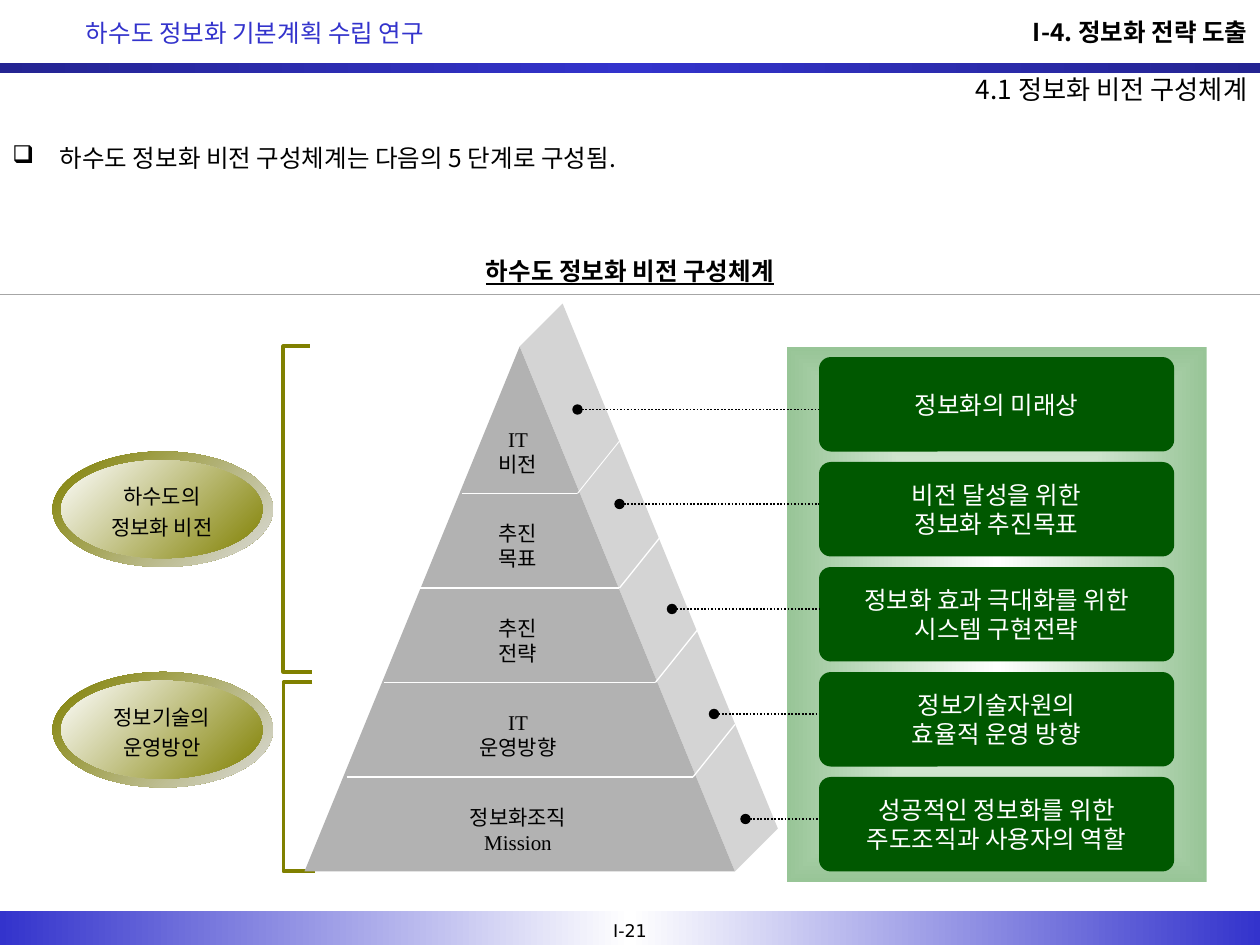
from lxml.etree import SubElement
from pptx import Presentation
from pptx.dml.color import RGBColor
from pptx.enum.dml import MSO_LINE
from pptx.enum.shapes import MSO_CONNECTOR, MSO_SHAPE
from pptx.enum.text import MSO_ANCHOR as ANCHOR, PP_ALIGN as ALIGN
from pptx.oxml import parse_xml
from pptx.oxml.ns import nsdecls, qn
from pptx.util import Pt

WHITE = RGBColor(0xFF, 0xFF, 0xFF)
BLACK = RGBColor(0x00, 0x00, 0x00)
BLUE = RGBColor(0x33, 0x33, 0xCC)
NAVY = RGBColor(0x24, 0x24, 0x92)
GREEN = RGBColor(0x00, 0x58, 0x00)
PALE_GREEN = RGBColor(0x98, 0xC5, 0x97)
OLIVE = RGBColor(0x80, 0x80, 0x00)
SILVER = RGBColor(0xDD, 0xDD, 0xDD)
FRONT_GRAY = RGBColor(0xB2, 0xB2, 0xB2)
SIDE_GRAY = RGBColor(0xD4, 0xD4, 0xD4)
RULE_GRAY = RGBColor(0xA6, 0xA6, 0xA6)
SANS = "Noto Sans CJK KR"
SERIF = "Times New Roman"


def write(shape, text, size=14, color=BLACK, font=SANS, bold=False, underline=False,
          align=ALIGN.CENTER, anchor=ANCHOR.MIDDLE, wrap=True, inset=7.2,
          spacing=None, bullet=None):
    frame = shape.text_frame
    frame.word_wrap = wrap
    frame.vertical_anchor = anchor
    frame.margin_left = frame.margin_right = Pt(inset)
    frame.margin_top = frame.margin_bottom = Pt(3.6)
    frame.text = text
    for paragraph in frame.paragraphs:
        if bullet:
            props = paragraph._p.get_or_add_pPr()
            props.set("marL", str(Pt(27)))
            props.set("indent", str(-Pt(27)))
            SubElement(props, qn("a:buChar")).set("char", bullet)
        paragraph.alignment = align
        paragraph.space_before = Pt(0)
        if spacing:
            paragraph.line_spacing = spacing
        for run in paragraph.runs:
            run.font.size = Pt(size)
            run.font.bold = bold
            run.font.underline = underline
            run.font.color.rgb = color
            run.font.name = font
            SubElement(run._r.get_or_add_rPr(), qn("a:ea")).set("typeface", SANS)


def fill_gradient(shape, colors, angle=None):
    """Spread the colors evenly; without an angle, spread them from the centre."""
    shape.shadow.inherit = False
    shape.line.fill.background()
    shape.fill.background()
    stops = "".join(
        f'<a:gs pos="{100000 * i // (len(colors) - 1)}"><a:srgbClr val="{color}"/></a:gs>'
        for i, color in enumerate(colors))
    if angle is None:
        course = ('<a:path path="shape"><a:fillToRect l="50000" t="50000" '
                  'r="50000" b="50000"/></a:path>')
    else:
        course = f'<a:lin ang="{angle * 60000}" scaled="1"/>'
    gradient = parse_xml(f'<a:gradFill {nsdecls("a")} rotWithShape="1">'
                         f'<a:gsLst>{stops}</a:gsLst>{course}</a:gradFill>')
    properties = shape._element.spPr
    properties.replace(properties.find(qn("a:noFill")), gradient)


prs = Presentation()
prs.slide_width, prs.slide_height = Pt(720), Pt(540)
slide = prs.slides.add_slide(prs.slide_layouts[5])
shapes = slide.shapes

# Title
title = shapes.title
title.left, title.top, title.width, title.height = Pt(126), Pt(36), Pt(594), Pt(30)
write(title, "4.1 정보화 비전 구성체계", size=15, align=ALIGN.RIGHT)

# Header and footer bands
for top, height, colors in ((36, 6, (NAVY, BLUE, NAVY)),
                            (520.5, 19.5, (BLUE, WHITE, BLUE))):
    band = shapes.add_shape(MSO_SHAPE.RECTANGLE, 0, Pt(top), Pt(720), Pt(height))
    fill_gradient(band, colors, angle=0)

# Free-standing texts
for left, top, width, height, text, style in (
    (340, 522, 40, 19.5, "I-21", dict(size=10, font="DejaVu Sans", wrap=False)),
    (42, 5, 360, 26, "하수도 정보화 기본계획 수립 연구",
     dict(color=BLUE, align=ALIGN.LEFT, spacing=1.1)),
    (563, 6, 157, 24, "I-4. 정보화 전략 도출",
     dict(bold=True, align=ALIGN.RIGHT, anchor=ANCHOR.TOP, wrap=False)),
    (0, 78, 720, 46, "하수도 정보화 비전 구성체계는 다음의 5 단계로 구성됨.",
     dict(align=ALIGN.LEFT, anchor=ANCHOR.TOP, bullet="❑")),
    (154, 142.5, 412, 24, "하수도 정보화 비전 구성체계",
     dict(font=SERIF, bold=True, underline=True, anchor=ANCHOR.TOP)),
):
    box = shapes.add_textbox(Pt(left), Pt(top), Pt(width), Pt(height))
    write(box, text, **style)

# Green panel with one box per level
panel = shapes.add_shape(MSO_SHAPE.RECTANGLE, Pt(449.5), Pt(198), Pt(240), Pt(306))
fill_gradient(panel, (WHITE, PALE_GREEN))
for i, meaning in enumerate((
    "정보화의 미래상",
    "비전 달성을 위한\n정보화 추진목표",
    "정보화 효과 극대화를 위한\n시스템 구현전략",
    "정보기술자원의\n효율적 운영 방향",
    "성공적인 정보화를 위한 주도조직과 사용자의 역할",
)):
    level_box = shapes.add_shape(MSO_SHAPE.ROUNDED_RECTANGLE,
                                 Pt(468), Pt(204 + 60 * i), Pt(203), Pt(54))
    level_box.adjustments[0] = 0.125
    level_box.shadow.inherit = False
    level_box.fill.solid()
    level_box.fill.fore_color.rgb = GREEN
    level_box.line.fill.background()
    write(level_box, meaning, color=WHITE)

# Olive ovals: rim and face
for top, text, font, inset in ((258, "하수도의\n정보화 비전", SANS, 1.5),
                               (384, "정보기술의 운영방안", SERIF, 7.2)):
    oval = shapes.add_group_shape()
    rim = oval.shapes.add_shape(MSO_SHAPE.OVAL, Pt(30), Pt(top), Pt(126), Pt(66))
    fill_gradient(rim, (OLIVE, SILVER), angle=45)
    face = oval.shapes.add_shape(MSO_SHAPE.OVAL, Pt(35), Pt(top + 5), Pt(115), Pt(56))
    fill_gradient(face, (WHITE, OLIVE), angle=45)
    write(face, text, size=12, font=font, inset=inset, spacing=1.2)

# Brackets
for top, bottom, top_end, bottom_end in ((198, 384, 177, 178.5), (390, 498, 178.5, 180)):
    outline = shapes.build_freeform(Pt(top_end), Pt(top))
    outline.add_line_segments([(Pt(162), Pt(top)), (Pt(162), Pt(bottom)),
                               (Pt(bottom_end), Pt(bottom))], close=False)
    bracket = outline.convert_to_shape()
    bracket.shadow.inherit = False
    bracket.fill.background()
    bracket.line.color.rgb = OLIVE
    bracket.line.width = Pt(2.25)

# Pyramid: side and front
DEPTH = 24.5
outline = shapes.build_freeform(Pt(297), Pt(198))
outline.add_line_segments([(Pt(297 + DEPTH), Pt(198 - DEPTH)),
                           (Pt(420 + DEPTH), Pt(498 - DEPTH)), (Pt(420), Pt(498))])
side = outline.convert_to_shape()
front = shapes.add_shape(MSO_SHAPE.ISOSCELES_TRIANGLE, Pt(174), Pt(198), Pt(246), Pt(300))
for part, color in ((side, SIDE_GRAY), (front, FRONT_GRAY)):
    part.shadow.inherit = False
    part.fill.solid()
    part.fill.fore_color.rgb = color
    part.line.fill.background()

# Pyramid labels
for i, (label, width) in enumerate((("IT\n비전", 38), ("추진\n목표", 38), ("추진\n전략", 38),
                                    ("IT\n운영방향", 63), ("정보화조직\nMission", 74))):
    label_box = shapes.add_textbox(Pt(296 - width / 2), Pt(240 + 54 * i), Pt(width), Pt(36))
    write(label_box, label, size=12, font=SERIF, anchor=ANCHOR.TOP, wrap=False)

# Lines: header rule, pyramid dividers, dotted leaders
lines = [(0, 168, 720, 168, RULE_GRAY, 0.25)]
for i, half in enumerate((33, 57, 77.5, 99)):
    y, weight = 282 + 54 * i, 0.75 if i else 0.5
    lines.append((297 - half, y, 297 + half, y, WHITE, weight))
    lines.append((297 + half, y, 321 + half, y - 30, WHITE, weight))
for x, y in ((330, 234), (354, 288), (384, 348), (408, 408), (426, 468)):
    lines.append((x, y, 468, y, BLACK, 1))
for x1, y1, x2, y2, color, weight in lines:
    connector = shapes.add_connector(MSO_CONNECTOR.STRAIGHT, Pt(x1), Pt(y1), Pt(x2), Pt(y2))
    connector.line.color.rgb = color
    connector.line.width = Pt(weight)
    if color != WHITE:
        connector.line.dash_style = MSO_LINE.ROUND_DOT
    if color == BLACK:
        SubElement(connector.line._get_or_add_ln(), qn("a:headEnd")).set("type", "oval")
    SubElement(connector._element.spPr, qn("a:effectLst"))

prs.save("out.pptx")
